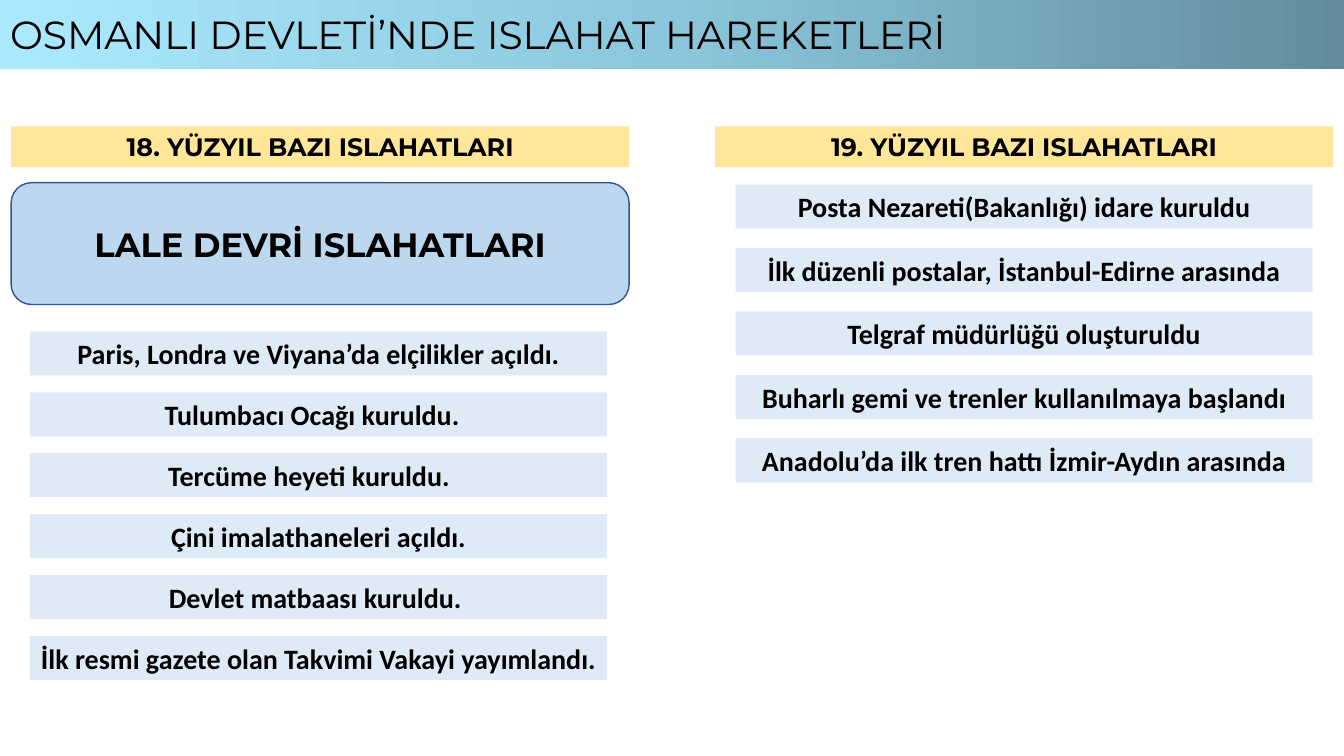
from copy import deepcopy
from pptx import Presentation
from pptx.dml.color import RGBColor as Rgb
from pptx.enum.shapes import MSO_SHAPE as Form
from pptx.enum.text import MSO_ANCHOR as Anchor, MSO_AUTO_SIZE as Fit, PP_ALIGN as Align
from pptx.oxml.ns import qn
from pptx.util import Pt

TITLE = "OSMANLI DEVLETİ’NDE ISLAHAT HAREKETLERİ"
ERA = "LALE DEVRİ ISLAHATLARI"
SIDES = [
    {
        "head": "18. YÜZYIL BAZI ISLAHATLARI",
        "left": 8, "inner": 21.4, "top": 236.7, "step": 43.5,
        "items": [
            ("Paris, Londra ve Viyana’da elçilikler açıldı.", 0),
            ("Tulumbacı Ocağı kuruldu.", 9),
            ("Tercüme heyeti kuruldu.", 13.5),
            ("Çini imalathaneleri açıldı.", 0),
            ("Devlet matbaası kuruldu.", 4.5),
            ("İlk resmi gazete olan Takvimi Vakayi yayımlandı.", 0),
        ],
    },
    {
        "head": "19. YÜZYIL BAZI ISLAHATLARI",
        "left": 510.8, "inner": 525.4, "top": 131.8, "step": 45.3,
        "items": [
            ("Posta Nezareti(Bakanlığı) idare kuruldu", 0),
            ("İlk düzenli postalar, İstanbul-Edirne arasında", 0),
            ("Telgraf müdürlüğü oluşturuldu", 0),
            ("Buharlı gemi ve trenler kullanılmaya başlandı", 0),
            ("Anadolu’da ilk tren hattı İzmir-Aydın arasında", 0),
        ],
    },
]
COLORS = {
    "text": "000000", "head": "FFE699", "item": "DEEBF7",
    "era": "BDD7EE", "edge": "325491",
    "light": "ABE9FF", "mid": "8BC7DC", "dark": "628C9B",
}
WIDE, HIGH = 960, 540
HEAD_W, ITEM_W = 441.4, 412.2
INSET = 7.2


def color(name):
    return Rgb.from_string(COLORS[name])


def write(shape, text, size, font, bold=True, align=Align.CENTER, pad=0):
    frame = shape.text_frame
    frame.word_wrap = True
    frame.auto_size = Fit.NONE
    frame.vertical_anchor = Anchor.MIDDLE
    frame.margin_right = Pt(INSET + pad)
    para = frame.paragraphs[0]
    para.alignment = align
    run = para.add_run()
    run.text = text
    run.font.size = Pt(size)
    run.font.name = font
    run.font.bold = bold
    run.font.color.rgb = color("text")


def add_box(slide, box, fill, form=Form.RECTANGLE):
    shape = slide.shapes.add_shape(form, *map(Pt, box))
    shape.shadow.inherit = False
    shape.fill.solid()
    shape.fill.fore_color.rgb = color(fill)
    shape.line.fill.background()
    return shape


def add_title(slide):
    title = slide.shapes.title
    title.left, title.top, title.width, title.height = map(Pt, (0, 0, WIDE, 49))
    write(title, TITLE, 28, "Montserrat", False, Align.LEFT)
    title.fill.gradient()
    title.fill.gradient_angle = 0
    stops = title.element.spPr.find(".//" + qn("a:gsLst"))
    stops.insert(1, deepcopy(stops[0]))
    for i, (stop, name) in enumerate(zip(title.fill.gradient_stops, ("light", "mid", "dark"))):
        stop.position = i / 2
        stop.color.rgb = color(name)


def add_side(slide, side):
    head = add_box(slide, (side["left"], 90.2, HEAD_W, 29), "head")
    write(head, side["head"], 18, "Montserrat")
    for i, (text, pad) in enumerate(side["items"]):
        top = side["top"] + i * side["step"]
        item = add_box(slide, (side["inner"], top, ITEM_W, 31.5), "item")
        write(item, text, 20, "Calibri", pad=pad)


def main():
    deck = Presentation()
    deck.slide_width, deck.slide_height = Pt(WIDE), Pt(HIGH)
    slide = deck.slides.add_slide(deck.slide_layouts[5])
    add_title(slide)
    for side in SIDES:
        add_side(slide, side)
    era = add_box(slide, (SIDES[0]["left"], 130.5, HEAD_W, 87), "era", Form.ROUNDED_RECTANGLE)
    era.line.color.rgb = color("edge")
    era.line.width = Pt(1)
    write(era, ERA, 24, "Montserrat")
    deck.save("out.pptx")


if __name__ == "__main__":
    main()
